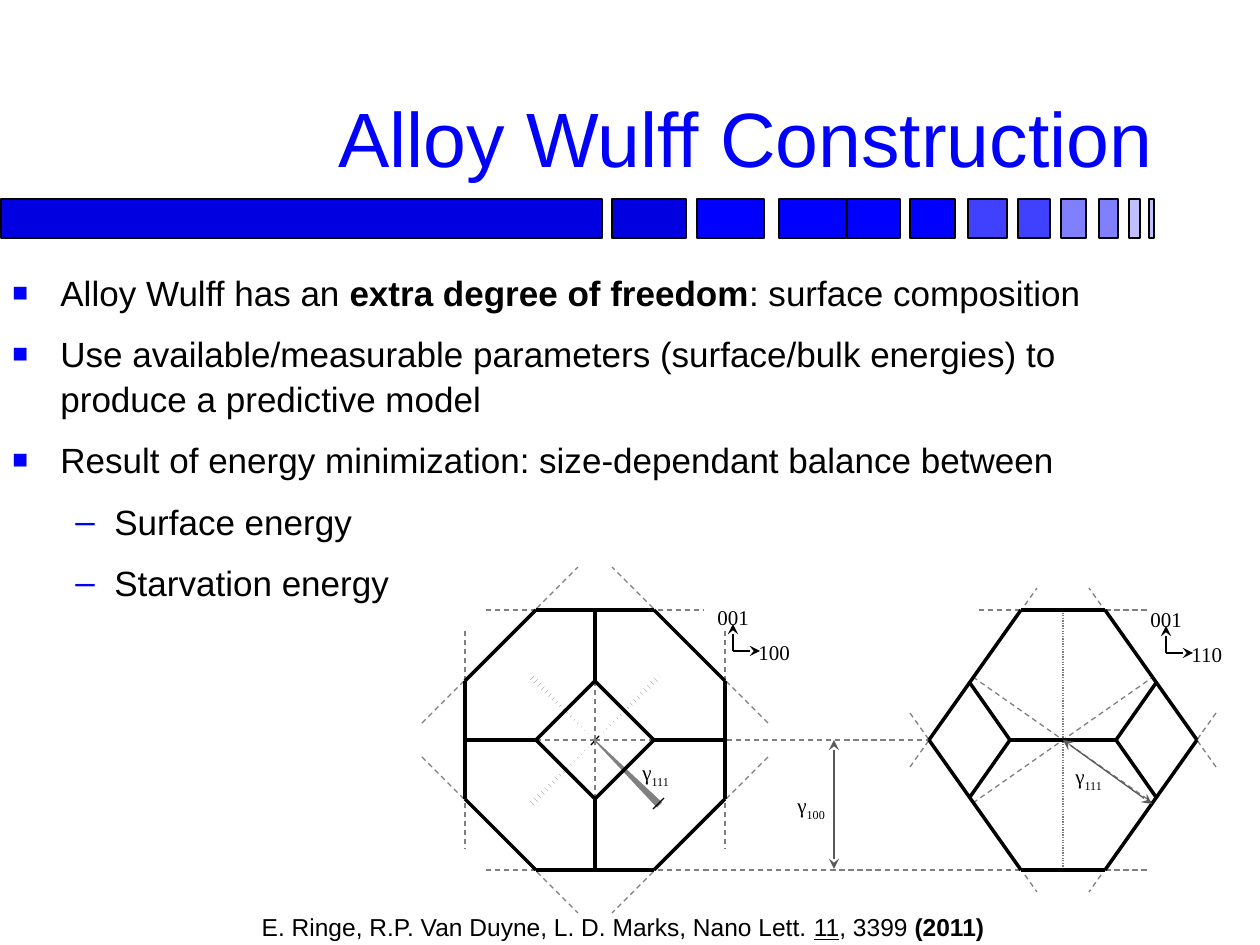
from dataclasses import dataclass
from itertools import product

from lxml import etree
from pptx import Presentation
from pptx import util as u
from pptx.dml.color import RGBColor
from pptx.enum import dml, shapes, text
from pptx.oxml.ns import qn

PX = 914400 / 126


@dataclass(frozen=True)
class Theme:
    sans: str = "Arial"
    serif: str = "Times New Roman"
    blue: str = "0000FF"
    black: str = "000000"
    white: str = "FFFFFF"
    guide: str = "7F7F7F"
    wedge: str = "808080"
    arrow: str = "5A5A5A"
    title: int = 44
    body: int = 20
    footer: int = 14
    label: int = 12
    thin: float = 0.75
    thick: float = 2


@dataclass(frozen=True)
class Span:
    words: str
    bold: bool = False
    underline: bool = False
    subscript: bool = False


@dataclass(frozen=True)
class Bullet:
    spans: tuple[Span, ...]
    level: int = 0


@dataclass(frozen=True)
class Bar:
    left: int
    width: int
    color: str


THEME = Theme()
BARS = [
    Bar(1, 601, "0000E0"), Bar(612, 74, "0000E0"), Bar(697, 67, "0000FF"),
    Bar(779, 53 + 14, "0000FF"), Bar(847, 53, "0000FF"), Bar(910, 45, "0000FF"),
    Bar(968, 39, "4040FF"), Bar(1018, 32, "4040FF"), Bar(1061, 25, "8080FF"),
    Bar(1099, 19, "8080FF"), Bar(1129, 11, "C0C0FF"), Bar(1149, 5, "C0C0FF"),
]
BULLETS = [
    Bullet((Span("Alloy Wulff has an "), Span("extra degree of freedom", bold=True),
            Span(": surface composition"))),
    Bullet((Span("Use available/measurable parameters (surface/bulk energies) "
                 "to produce a predictive model"),)),
    Bullet((Span("Result of energy minimization: size-dependant balance between"),)),
    Bullet((Span("Surface energy"),), 1),
    Bullet((Span("Starvation energy"),), 1),
]
CITATION = (Span("E. Ringe, R.P. Van Duyne, L. D. Marks, Nano Lett. "),
            Span("11", underline=True), Span(", 3399 "), Span("(2011)", bold=True))
SIGNS = (-1, 1)
QUADRANTS = list(product(SIGNS, SIGNS))


def emu(px: float) -> int:
    return round(px * PX)


def rgb(color: str) -> RGBColor:
    return RGBColor.from_string(color)


def add_box(page, left: int, top: int, width: int, height: int):
    box = page.shapes.add_textbox(emu(left), emu(top), emu(width), emu(height))
    box.text_frame.word_wrap = True
    return box


def write(para, spans, size: int, color: str = THEME.black, face: str = THEME.sans) -> None:
    for span in spans:
        run = para.add_run()
        run.text = span.words
        run.font.size, run.font.name = u.Pt(size), face
        run.font.color.rgb = rgb(color)
        run.font.bold, run.font.underline = span.bold, span.underline
        if span.subscript:
            run.font._element.set("baseline", "-30000")


def add_label(page, left: int, top: int, words: str, subscript: str = "") -> None:
    box = add_box(page, left, top, 62, 41)
    box.text_frame.margin_right = 0
    spans = [Span(words)] + ([Span(subscript, subscript=True)] if subscript else [])
    write(box.text_frame.paragraphs[0], spans, THEME.label, face=THEME.serif)


def add_bullet_mark(para, level: int) -> None:
    props = para._p.get_or_add_pPr()
    indent, hang = ((48, 48), (102, 39))[level]
    props.set("marL", str(emu(indent)))
    props.set("indent", str(-emu(hang)))
    color = etree.SubElement(props, qn("a:buClr"))
    etree.SubElement(color, qn("a:srgbClr"), val=THEME.blue)
    etree.SubElement(props, qn("a:buSzPct"), val=("75000", "100000")[level])
    etree.SubElement(props, qn("a:buFont"), typeface=THEME.sans)
    etree.SubElement(props, qn("a:buChar"), char="■–"[level])


def add_line(page, start, end, color: str = THEME.black, weight: float = THEME.thin,
             dash=None, heads: tuple[str, ...] = ()) -> None:
    line = page.shapes.add_connector(shapes.MSO_CONNECTOR.STRAIGHT, *map(emu, (*start, *end)))
    line.line.color.rgb = rgb(color)
    line.line.width = u.Pt(weight)
    if dash:
        line.line.dash_style = dash
    for head in heads:
        etree.SubElement(line.line._get_or_add_ln(), qn(f"a:{head}"), type="stealth")
    etree.SubElement(line._element.spPr, qn("a:effectLst"))


def add_guide(page, start, end, dash=dml.MSO_LINE.DASH) -> None:
    add_line(page, start, end, THEME.guide, dash=dash)


def add_edge(page, start, end) -> None:
    add_line(page, start, end, weight=THEME.thick)


def add_dimension(page, start, end) -> None:
    add_line(page, start, end, THEME.arrow, heads=("headEnd", "tailEnd"))


def add_axes(page, x: int, y: int, across: str) -> None:
    add_label(page, x - 28, y - 53, "001")
    add_label(page, x + 13, y - 18, across)
    for tip in ((x, y - 27), (x + 27, y)):
        add_line(page, (x, y), tip, heads=("tailEnd",))


def add_wedge(page, x: int, y: int, turn: int, pattern=None) -> None:
    wedge = page.shapes.add_shape(shapes.MSO_SHAPE.ISOSCELES_TRIANGLE,
                                  emu(x - 3), emu(y - 45), emu(6), emu(91))
    wedge.rotation = turn
    wedge.shadow.inherit = False
    if pattern:
        wedge.fill.patterned()
        wedge.fill.pattern = pattern
        wedge.fill.fore_color.rgb = rgb(THEME.guide)
        wedge.fill.back_color.rgb = rgb(THEME.white)
        wedge.line.fill.background()
    else:
        wedge.fill.solid()
        wedge.fill.fore_color.rgb = wedge.line.color.rgb = rgb(THEME.wedge)
        wedge.line.width = u.Pt(THEME.thin)


def draw_octagon(page, x: int, y: int) -> None:
    half, inner, reach = 130, 59, 109
    # Wedges along the diagonals, points toward the centre
    down, up = dml.MSO_PATTERN.WIDE_DOWNWARD_DIAGONAL, dml.MSO_PATTERN.WIDE_UPWARD_DIAGONAL
    for sx, sy, turn, pattern in ((-1, 1, 45, down), (-1, -1, 135, up),
                                  (1, -1, 225, down), (1, 1, 315, None)):
        add_wedge(page, x + 32 * sx, y + 32 * sy, turn, pattern)
    add_line(page, (x - 4, y + 5), (x + 4, y - 4))
    add_line(page, (x + 58, y + 69), (x + 69, y + 58))
    # Guides, then solid edges
    for s in SIGNS:
        add_guide(page, (x - reach, y + half * s), (x + reach, y + half * s))
        add_guide(page, (x + half * s, y - reach), (x + half * s, y + reach))
        add_guide(page, (x, y), (x + half * s, y))
        add_guide(page, (x, y), (x, y + half * s))
    for sx, sy in QUADRANTS:
        add_guide(page, (x + 173 * sx, y + 17 * sy), (x + 17 * sx, y + 173 * sy))
    for s in SIGNS:
        add_edge(page, (x - inner, y + half * s), (x + inner, y + half * s))
        add_edge(page, (x + half * s, y - inner), (x + half * s, y + inner))
        add_edge(page, (x + inner * s, y), (x + half * s, y))
        add_edge(page, (x, y + inner * s), (x, y + half * s))
    for sx, sy in QUADRANTS:
        add_edge(page, (x + half * sx, y + inner * sy), (x + inner * sx, y + half * sy))
        add_edge(page, (x + inner * sx, y), (x, y + inner * sy))
    add_label(page, x + 35, y + 13, "γ", "111")
    add_axes(page, 733, 651, "100")


def draw_hexagon(page, x: int, y: int) -> None:
    half = 130
    for sx, sy in QUADRANTS:
        add_guide(page, (x + 153 * sx, y - 27 * sy), (x + 26 * sx, y + 152 * sy))
    for s in SIGNS:
        add_guide(page, (x - 84, y + half * s), (x + 84, y + half * s))
        add_guide(page, (x - 90, y - 63 * s), (x + 90, y + 63 * s))
    add_guide(page, (x, y - half), (x, y + half), dml.MSO_LINE.ROUND_DOT)
    for sx, sy in QUADRANTS:
        add_edge(page, (x + 134 * sx, y), (x + 42 * sx, y + half * sy))
        add_edge(page, (x + 93 * sx, y + 57 * sy), (x + 53 * sx, y))
    for s in SIGNS:
        add_edge(page, (x - 42, y + half * s), (x + 42, y + half * s))
    add_edge(page, (x - 53, y), (x + 53, y))
    add_dimension(page, (x, y), (x + 89, y + 64))
    add_label(page, x, y + 17, "γ", "111")
    add_axes(page, 1166, 653, "110")


def main() -> None:
    deck = Presentation()
    deck.slide_width, deck.slide_height = emu(1260), emu(945)
    page = deck.slides.add_slide(deck.slide_layouts[6])
    # Fading bar
    for bar in BARS:
        block = page.shapes.add_shape(shapes.MSO_SHAPE.RECTANGLE, emu(bar.left), emu(199),
                                      emu(bar.width), emu(39))
        block.shadow.inherit = False
        block.fill.solid()
        block.fill.fore_color.rgb = rgb(bar.color)
        block.line.color.rgb = rgb(THEME.black)
        block.line.width = u.Pt(1)
    # Title
    title = add_box(page, 95, 26, 1071, 163).text_frame
    title.vertical_anchor = text.MSO_ANCHOR.BOTTOM
    title.paragraphs[0].alignment = text.PP_ALIGN.RIGHT
    write(title.paragraphs[0], [Span("Alloy Wulff Construction")], THEME.title, THEME.blue)
    # Bullets
    body = add_box(page, 0, 263, 1134, 622).text_frame
    for number, bullet in enumerate(BULLETS):
        para = body.add_paragraph() if number else body.paragraphs[0]
        add_bullet_mark(para, bullet.level)
        para.line_spacing = 1.05
        para.space_before, para.space_after = u.Pt(4 if number else 0), u.Pt(6)
        write(para, bullet.spans, THEME.body)
    # Both projections and the shared height
    add_guide(page, (727, 740), (929, 740))
    add_guide(page, (704, 870), (979, 870))
    add_dimension(page, (834, 740), (834, 869))
    add_label(page, 785, 786, "γ", "100")
    draw_hexagon(page, 1063, 740)
    draw_octagon(page, 595, 740)
    # Citation
    footer = add_box(page, 0, 906, 1246, 43).text_frame
    footer.paragraphs[0].alignment = text.PP_ALIGN.CENTER
    write(footer.paragraphs[0], CITATION, THEME.footer)
    deck.save("out.pptx")


if __name__ == "__main__":
    main()
